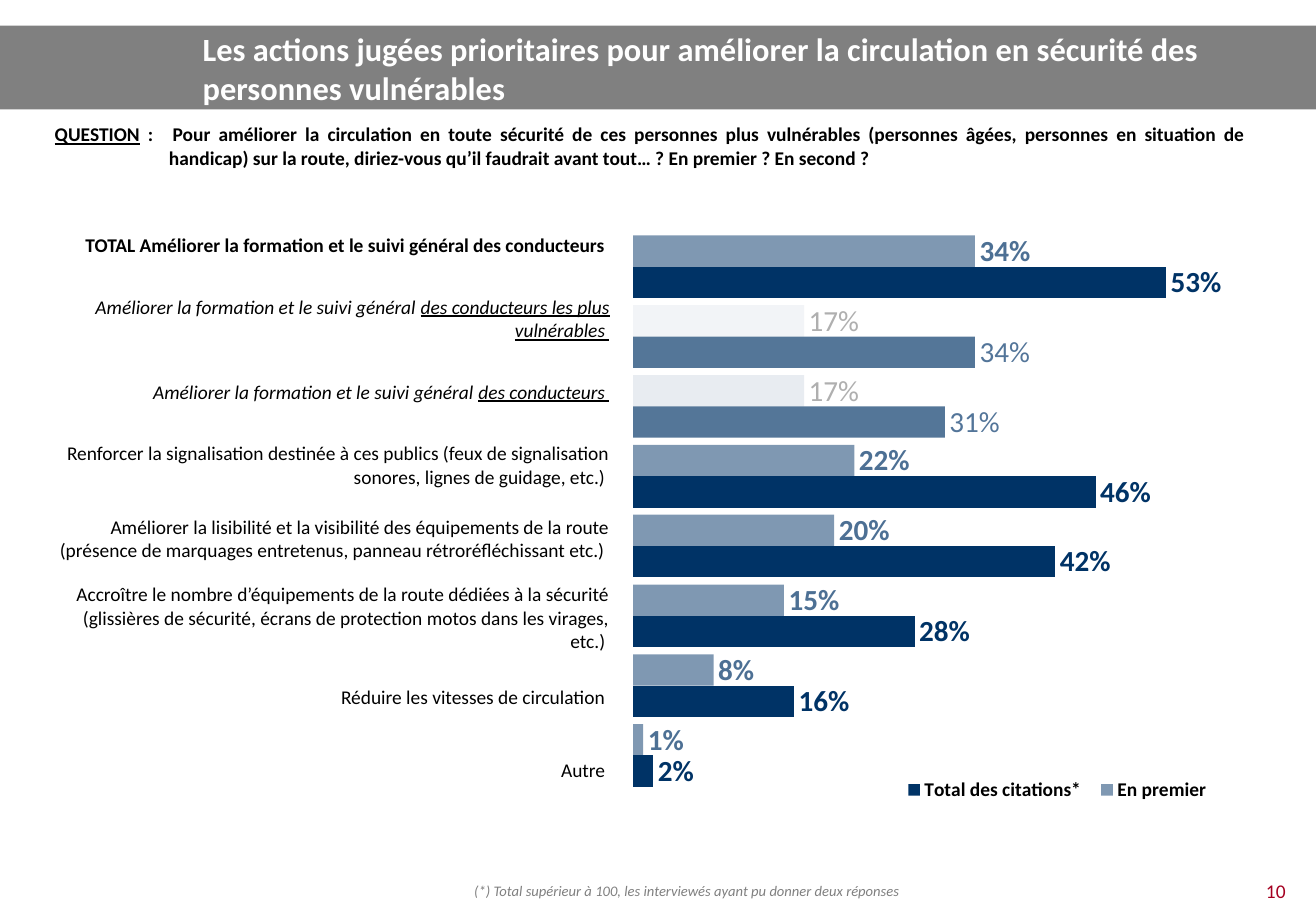
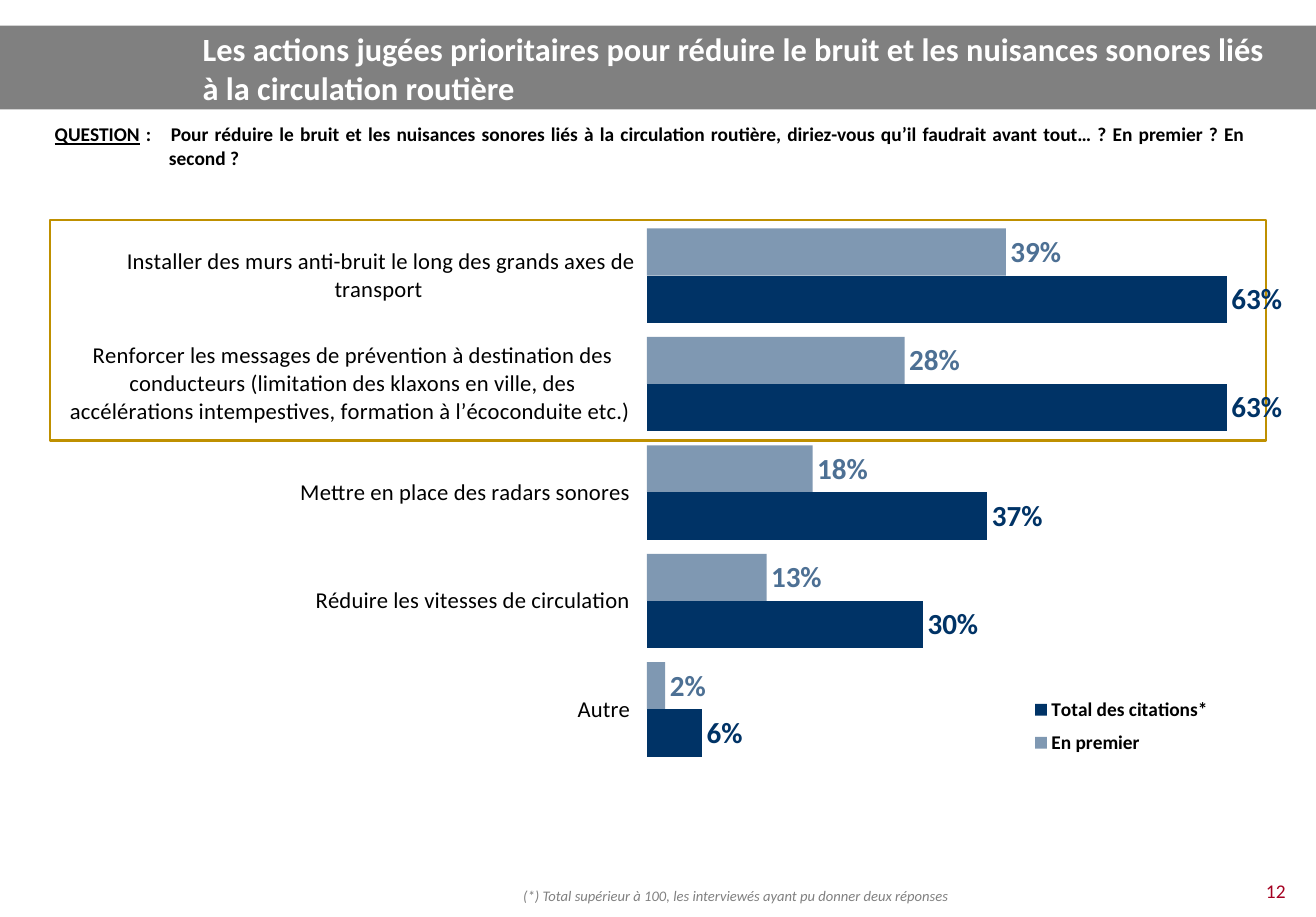
from dataclasses import dataclass

from lxml.etree import SubElement
from pptx import Presentation
from pptx.chart.data import CategoryChartData
from pptx.dml.color import RGBColor
from pptx.enum.chart import XL_CHART_TYPE, XL_LABEL_POSITION, XL_LEGEND_POSITION, XL_TICK_MARK
from pptx.enum.shapes import MSO_SHAPE
from pptx.enum.text import MSO_ANCHOR, PP_ALIGN
from pptx.oxml import parse_xml
from pptx.oxml.ns import nsdecls, qn
from pptx.util import Inches, Pt


@dataclass(frozen=True)
class Theme:
    font: str = "Calibri"
    band: str = "808080"
    navy: str = "003366"
    label: str = "4D7094"
    muted: str = "537599"
    faded: str = "AFAFAF"
    page_number: str = "A50021"
    frame: str = "BF9000"
    white: str = "FFFFFF"
    black: str = "000000"
    title_size: int = 20
    value_size: int = 18
    axis_size: int = 14
    body_size: int = 12
    note_size: int = 9


THEME = Theme()
TOTAL = "Total des citations* "
FIRST = "En premier "
NOTE = "(*) Total supérieur à 100, les interviewés ayant pu donner deux réponses"


def apply_format(font, **values):
    for name, value in {"name": THEME.font, **values}.items():
        if name == "color":
            font.color.rgb = RGBColor.from_string(value)
        elif name == "size":
            font.size = Pt(value)
        else:
            setattr(font, name, value)


def paint(fill, color, alpha=100):
    fill.solid()
    fill.fore_color.rgb = RGBColor.from_string(color)
    if alpha < 100:
        for node in fill._xPr.iter(qn("a:srgbClr")):
            SubElement(node, qn("a:alpha")).set("val", str(alpha * 1000))


def manual_layout(place, inner=False):
    target = '<c:layoutTarget val="inner"/>' if inner else ""
    modes = '<c:xMode val="edge"/><c:yMode val="edge"/>'
    sizes = "".join(f'<c:{key} val="{value}"/>' for key, value in zip("xywh", place))
    return parse_xml(f"<c:layout {nsdecls('c')}><c:manualLayout>{target}{modes}{sizes}"
                     "</c:manualLayout></c:layout>")


def clear_area():
    return parse_xml(f"<c:spPr {nsdecls('c', 'a')}><a:noFill/><a:ln><a:noFill/></a:ln></c:spPr>")


class SurveyDeck:
    def __init__(self):
        self.deck = Presentation()
        self.deck.slide_width = Inches(11.29)
        self.deck.slide_height = Inches(7.87)
        self.page = None

    def rectangle(self, place, color, line=None):
        shape = self.page.shapes.add_shape(MSO_SHAPE.RECTANGLE, *map(Inches, place))
        shape.shadow.inherit = False
        paint(shape.fill, color)
        if line:
            paint(shape.line.fill, line)
            shape.line.width = Pt(1.5)
        else:
            shape.line.fill.background()

    def runs(self, para, parts, **values):
        for text, extra in parts:
            span = para.add_run()
            span.text = text
            apply_format(span.font, **{**values, **extra})

    def text(self, place, parts, align=PP_ALIGN.LEFT, anchor=MSO_ANCHOR.TOP, **values):
        box = self.page.shapes.add_textbox(*map(Inches, place))
        frame = box.text_frame
        frame.word_wrap = True
        frame.vertical_anchor = anchor
        para = frame.paragraphs[0]
        para.alignment = align
        self.runs(para, parts, **values)
        return frame

    def start_page(self, number, title, question, frame=None):
        self.page = self.deck.slides.add_slide(self.deck.slide_layouts[6])
        self.rectangle((0, 0.22, 11.29, 0.72), THEME.band)
        self.text((10.65, 7.5, 0.59, 0.3), [(str(number), {})], PP_ALIGN.CENTER,
                  size=THEME.body_size, color=THEME.page_number)
        if frame:
            self.rectangle(frame, THEME.white, THEME.frame)
        self.text((1.64, 0.22, 9.48, 0.72), [(title, {})], anchor=MSO_ANCHOR.MIDDLE,
                  size=THEME.title_size, color=THEME.white, bold=True)
        body = self.text((0.38, 1.01, 10.67, 0.48),
                         [("QUESTION", {"underline": True}), (f" :\t{question}", {})],
                         PP_ALIGN.JUSTIFY, size=THEME.body_size, color=THEME.black, bold=True)
        body.margin_left, body.margin_right = Inches(0.09), Inches(0.36)
        body.margin_top = body.margin_bottom = Inches(0.04)
        properties = body.paragraphs[0]._p.get_or_add_pPr()
        properties.set("marL", str(Inches(0.98)))
        properties.set("indent", str(Inches(-0.98)))

    def note(self, left, top):
        self.text((left, top, 4.51, 0.25), [(NOTE, {})],
                  size=THEME.note_size, color=THEME.band, italic=True)

    def chart(self, place, categories, first, total, maximum, gap, plot_place, legend_place,
              show_categories=True):
        data = CategoryChartData(number_format="0%")
        data.categories = categories
        for name, percents in ((FIRST, first), (TOTAL, total)):
            data.add_series(name, [percent / 100 for percent in percents])
        chart = self.page.shapes.add_chart(
            XL_CHART_TYPE.BAR_CLUSTERED, *map(Inches, place), data).chart
        apply_format(chart.font, size=THEME.value_size, color=THEME.black)
        chart.has_title = False

        value_axis, category_axis = chart.value_axis, chart.category_axis
        value_axis.minimum_scale, value_axis.maximum_scale = 0, maximum
        value_axis.has_major_gridlines = False
        value_axis.visible = False
        category_axis.reverse_order = True
        category_axis.visible = show_categories
        if show_categories:
            category_axis.major_tick_mark = XL_TICK_MARK.OUTSIDE
            category_axis.format.line.fill.background()
            apply_format(category_axis.tick_labels.font, size=THEME.axis_size, color=THEME.black)

        plot = chart.plots[0]
        plot.gap_width, plot.overlap = gap, 0
        plot.vary_by_categories = False
        for series, alpha, color in zip(plot.series, (50, 100), (THEME.label, THEME.navy)):
            series.invert_if_negative = False
            paint(series.format.fill, THEME.navy, alpha)
            labels = series.data_labels
            labels.show_value = True
            labels.number_format, labels.number_format_is_linked = "0%", False
            labels.position = XL_LABEL_POSITION.OUTSIDE_END
            apply_format(labels.font, size=THEME.value_size, color=color, bold=True)

        chart.has_legend = True
        legend = chart.legend
        legend.position = XL_LEGEND_POSITION.RIGHT
        legend.include_in_layout = False
        apply_format(legend.font, size=THEME.body_size, color=THEME.black, bold=True)

        space = chart.element
        area = space.find(f".//{qn('c:plotArea')}")
        key = space.find(f".//{qn('c:legend')}")
        for parent in (area, key):
            for old in parent.findall(qn("c:layout")):
                parent.remove(old)
        area.insert(0, manual_layout(plot_place, inner=True))
        area.append(clear_area())
        key.find(qn("c:legendPos")).addnext(manual_layout(legend_place))
        space.find(qn("c:txPr")).addprevious(clear_area())
        return plot

    def soften(self, series, index, alpha, color):
        point = series.points[index]
        paint(point.format.fill, THEME.navy, alpha)
        apply_format(point.data_label.font, size=THEME.value_size, color=color, bold=False)
        point.data_label.position = XL_LABEL_POSITION.OUTSIDE_END

    def label_table(self, place, rows, heights):
        table = self.page.shapes.add_table(len(rows), 1, *map(Inches, place)).table
        table.first_row = table.horz_banding = False
        for index, (parts, height) in enumerate(zip(rows, heights)):
            table.rows[index].height = Inches(height)
            cell = table.cell(index, 0)
            cell.fill.background()
            cell.vertical_anchor = MSO_ANCHOR.MIDDLE
            cell.margin_left = cell.margin_right = cell.margin_top = Inches(0.01)
            cell.margin_bottom = 0
            para = cell.text_frame.paragraphs[0]
            para.alignment = PP_ALIGN.RIGHT
            self.runs(para, parts, size=THEME.body_size, color=THEME.black, bold=False)


def vulnerable_people(survey):
    survey.start_page(
        10,
        "Les actions jugées prioritaires pour améliorer la circulation en sécurité des personnes vulnérables",
        "Pour améliorer la circulation en toute sécurité de ces personnes plus vulnérables (personnes âgées, "
        "personnes en situation de handicap) sur la route, diriez-vous qu’il faudrait avant tout… ? "
        "En premier ? En second ?")
    plot = survey.chart(
        (5.13, 1.99, 5.5, 5.15), [str(number) for number in range(1, 9)],
        (34, 17, 17, 22, 20, 15, 8, 1), (53, 34, 31, 46, 42, 28, 16, 2),
        0.6, 23, (0.055, 0, 0.941, 0.931), (0.47, 0.9, 0.5, 0.06), show_categories=False)
    first, total = plot.series
    for index, alpha in ((1, 5), (2, 9)):
        survey.soften(first, index, alpha, THEME.faded)
        survey.soften(total, index, 67, THEME.muted)
    survey.note(3.97, 7.52)

    training = "Améliorer la formation et le suivi général "
    italic = {"italic": True}
    underlined = {"italic": True, "underline": True}
    rows = [
        [(f"TOTAL {training}des conducteurs ", {"bold": True})],
        [(training, italic), ("des conducteurs les plus vulnérables ", underlined)],
        [(training, italic), ("des conducteurs ", underlined)],
    ]
    rows += [[(label, {})] for label in (
        "Renforcer la signalisation destinée à ces publics (feux de signalisation sonores, "
        "lignes de guidage, etc.) ",
        "Améliorer la lisibilité et la visibilité des équipements de la route (présence de marquages "
        "entretenus, panneau rétroréfléchissant etc.) ",
        "Accroître le nombre d’équipements de la route dédiées à la sécurité (glissières de sécurité, "
        "écrans de protection motos dans les virages, etc.) ",
        "Réduire les vitesses de circulation ",
        "Autre ",
    )]
    heights = [0.63] * 5 + [0.73] + [0.63] * 2
    survey.label_table((0.46, 1.79, 4.78, 5.15), rows, heights)


def traffic_noise(survey):
    survey.start_page(
        12,
        "Les actions jugées prioritaires pour réduire le bruit et les nuisances sonores liés "
        "à la circulation routière",
        "Pour réduire le bruit et les nuisances sonores liés à la circulation routière, diriez-vous "
        "qu’il faudrait avant tout… ? En premier ? En second ?",
        frame=(0.43, 1.89, 10.43, 1.89))
    categories = (
        "Installer des murs anti-bruit le long des grands axes de transport ",
        "Renforcer les messages de prévention à destination des conducteurs (limitation des klaxons en "
        "ville, des accélérations intempestives, formation à l’écoconduite etc.) ",
        "Mettre en place des radars sonores ",
        "Réduire les vitesses de circulation ",
        "Autre ",
    )
    survey.chart((0.6, 1.9, 10.51, 4.66), categories, (39, 28, 18, 13, 2), (63, 63, 37, 30, 6),
                 0.7, 30, (0.47, 0, 0.527, 0.999), (0.76, 0.86, 0.2, 0.14))
    survey.note(4.39, 7.56)


def main():
    survey = SurveyDeck()
    vulnerable_people(survey)
    traffic_noise(survey)
    survey.deck.save("out.pptx")


if __name__ == "__main__":
    main()
